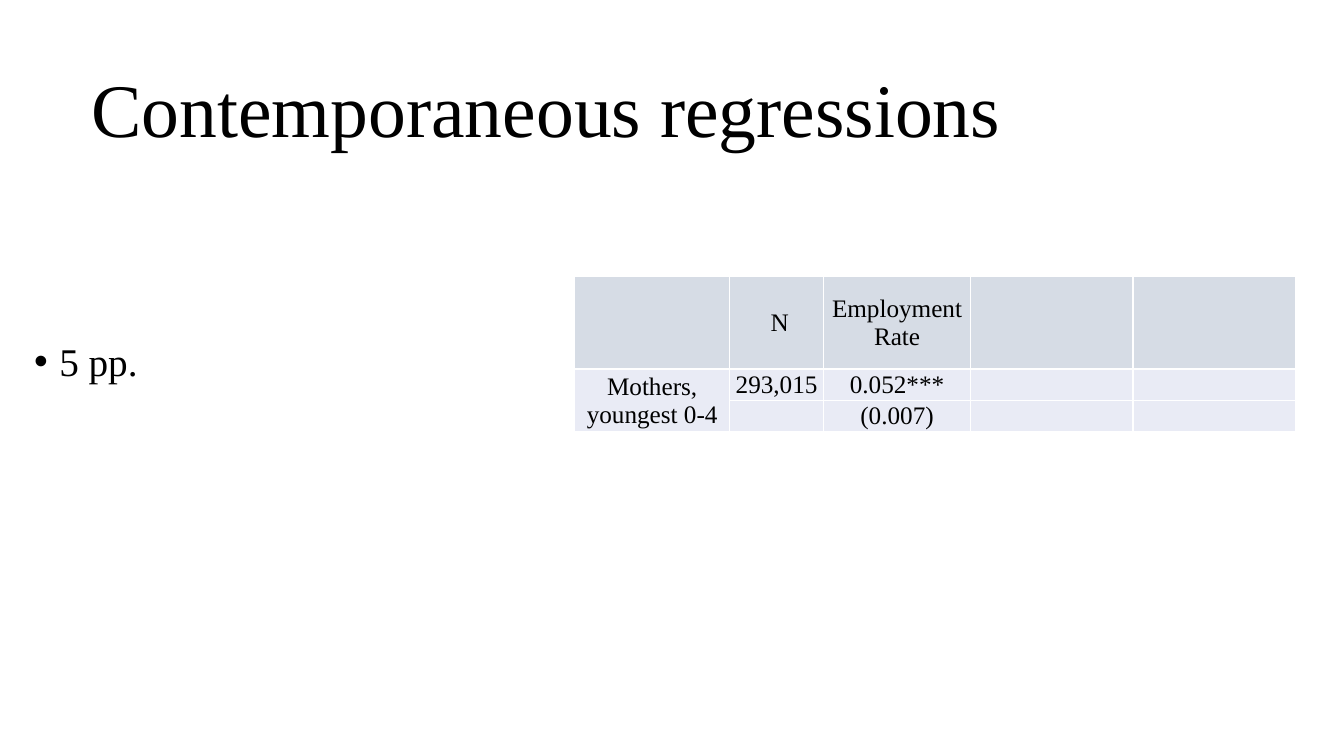
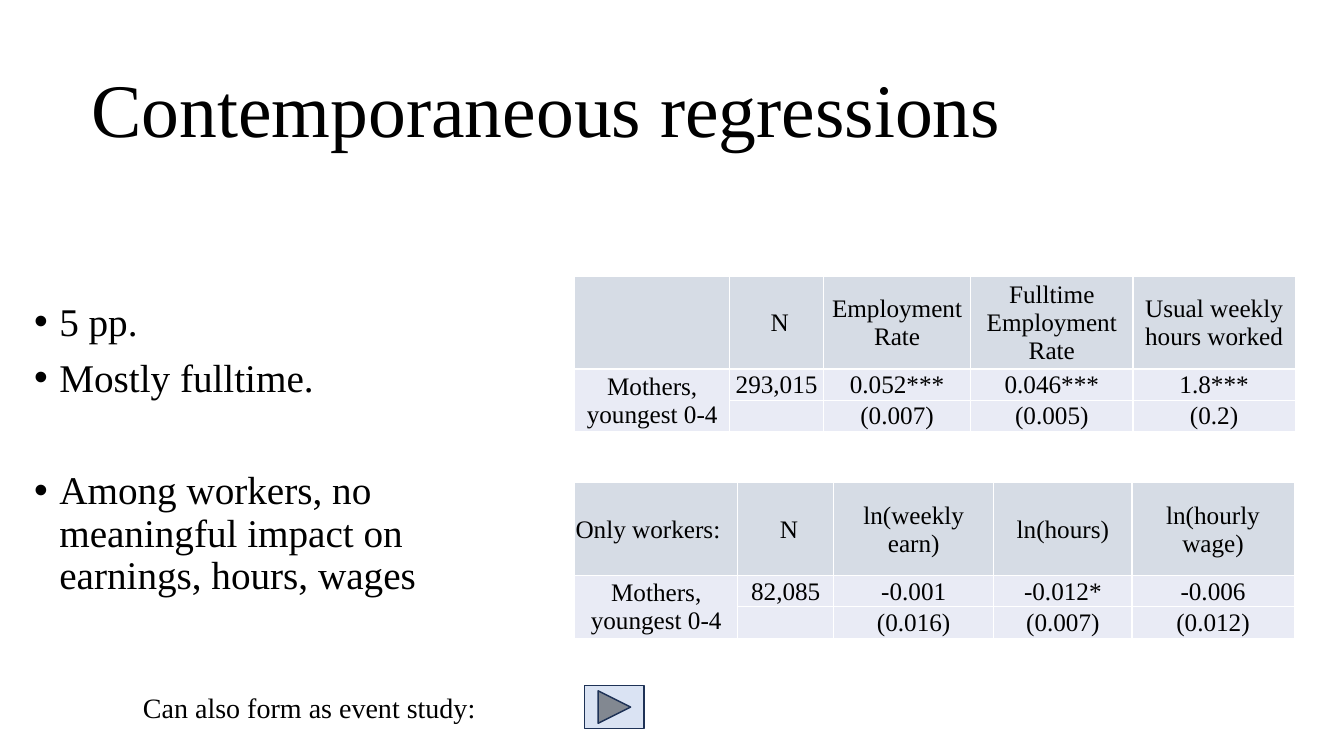
from dataclasses import dataclass

from lxml import etree
from pptx import Presentation
from pptx import util as u
from pptx.dml.color import RGBColor
from pptx.enum import shapes, text
from pptx.oxml import ns

COLORS = {
    "text": "000000",
    "header": "D6DCE5",
    "body": "E9EBF5",
    "border": "FFFFFF",
    "button": "DAE3F3",
    "button_line": "1E3256",
}
FONT = "Times New Roman"
GRID = u.Inches(0.1)  # side of one square grid cell
SLIDE_COLUMNS, SLIDE_ROWS = 133.33, 75
ROW_HEIGHTS = (9.2, 3.1, 3.1)
CELL_FORMAT = {
    "margin_left": u.Inches(0.01),
    "margin_right": u.Inches(0.01),
    "margin_top": u.Inches(0.01),
    "margin_bottom": 0,
    "vertical_anchor": text.MSO_ANCHOR.MIDDLE,
}
BULLET_FORMAT = {"marL": "228600", "indent": "-228600"}


@dataclass(frozen=True)
class Box:
    """An area in grid cells."""

    left: float
    top: float
    width: float
    height: float

    def emu(self) -> tuple[int, ...]:
        return tuple(grid(n) for n in (self.left, self.top, self.width, self.height))


@dataclass(frozen=True)
class Bullet:
    wording: str
    space_before: float = 10


@dataclass(frozen=True)
class Regression:
    """Estimates with their standard errors, one outcome a column."""

    top: float
    widths: tuple[float, ...]
    corner: str
    outcomes: tuple[str, ...]
    sample_size: str
    estimates: tuple[str, ...]
    errors: tuple[str, ...]

    def rows(self, shown: int) -> list[list[str]]:
        """Cell texts, with only the first outcomes filled in."""
        starts = ((self.corner, " N"), ("Mothers, youngest 0-4", self.sample_size), ("", ""))
        results = (self.outcomes, self.estimates, self.errors)
        return [
            [*start, *(word if i < shown else "" for i, word in enumerate(words))]
            for start, words in zip(starts, results)
        ]


ALL_MOTHERS = Regression(
    27.4,
    (15.4, 9.3, 14.6, 16.1, 16.1),
    "",
    ("Employment Rate", "Fulltime Employment Rate", "Usual weekly hours worked"),
    "293,015",
    ("0.052***", "0.046***", "1.8***"),
    ("(0.007)", "(0.005)", "(0.2)"),
)
ONLY_WORKERS = Regression(
    47.9,
    (16.2, 9.5, 15.9, 13.7, 16.1),
    "Only workers:",
    ("ln(weekly earn)", "ln(hours)", "ln(hourly wage)"),
    "82,085",
    ("-0.001", "-0.012*", "-0.006"),
    ("(0.016)", "(0.007)", "(0.012)"),
)


def grid(cells: float) -> int:
    return round(cells * GRID)


def rgb(name: str) -> RGBColor:
    return RGBColor.from_string(COLORS[name])


def write(paragraph, wording: str, size: float) -> None:
    run = paragraph.add_run()
    run.text = wording
    run.font.name = FONT
    run.font.size = u.Pt(size)
    run.font.color.rgb = rgb("text")


def add_frame(slide, box: Box):
    frame = slide.shapes.add_textbox(*box.emu()).text_frame
    frame.word_wrap = True
    return frame


def add_title(slide, wording: str) -> None:
    frame = add_frame(slide, Box(8.1, 4, 116.1, 14.5))
    frame.vertical_anchor = text.MSO_ANCHOR.MIDDLE
    frame.paragraphs[0].line_spacing = 0.9
    write(frame.paragraphs[0], wording, 54)


def add_bullets(slide, top: float, bullets: tuple[Bullet, ...]) -> None:
    frame = add_frame(slide, Box(2.4, top, 51.1, 40))
    for i, bullet in enumerate(bullets):
        paragraph = frame.add_paragraph() if i else frame.paragraphs[0]
        paragraph.line_spacing = 0.9
        paragraph.space_before = u.Pt(bullet.space_before)
        write(paragraph, bullet.wording, 28)
        properties = paragraph._p.get_or_add_pPr()
        for key, value in BULLET_FORMAT.items():
            properties.set(key, value)
        etree.SubElement(properties, ns.qn("a:buFont")).set("typeface", "Arial")
        etree.SubElement(properties, ns.qn("a:buChar")).set("char", "•")


def add_borders(cell) -> None:
    properties = cell._tc.get_or_add_tcPr()
    for i, side in enumerate(("a:lnL", "a:lnR", "a:lnT", "a:lnB")):
        line = etree.Element(ns.qn(side), w=str(u.Pt(1)))
        fill = etree.SubElement(line, ns.qn("a:solidFill"))
        etree.SubElement(fill, ns.qn("a:srgbClr")).set("val", COLORS["border"])
        properties.insert(i, line)


def add_regression(slide, regression: Regression, shown: int = 3) -> None:
    rows = regression.rows(shown)
    box = Box(57, regression.top, sum(regression.widths), sum(ROW_HEIGHTS))
    table = slide.shapes.add_table(len(rows), len(regression.widths), *box.emu()).table
    table.first_row = table.horz_banding = False
    for column, width in zip(table.columns, regression.widths):
        column.width = grid(width)
    for row, height in zip(table.rows, ROW_HEIGHTS):
        row.height = grid(height)
    for r, words in enumerate(rows):
        for c, wording in enumerate(words):
            cell = table.cell(r, c)
            for key, value in CELL_FORMAT.items():
                setattr(cell, key, value)
            cell.fill.solid()
            cell.fill.fore_color.rgb = rgb("body" if r else "header")
            add_borders(cell)
            if wording:
                paragraph = cell.text_frame.paragraphs[0]
                is_corner = r == c == 0
                paragraph.alignment = text.PP_ALIGN.LEFT if is_corner else text.PP_ALIGN.CENTER
                write(paragraph, wording, 18)
    table.cell(1, 0).merge(table.cell(2, 0))


def add_event_study(slide) -> None:
    kind = shapes.MSO_SHAPE.ACTION_BUTTON_FORWARD_OR_NEXT
    button = slide.shapes.add_shape(kind, *Box(58, 68, 5.9, 4.3).emu())
    button.shadow.inherit = False
    button.fill.solid()
    button.fill.fore_color.rgb = rgb("button")
    button.line.color.rgb = rgb("button_line")
    button.line.width = u.Pt(1)
    caption = add_frame(slide, Box(13.2, 68, 36.6, 4.4))
    write(caption.paragraphs[0], "Can also form as event study:", 20)


def main() -> None:
    deck = Presentation()
    deck.slide_width, deck.slide_height = grid(SLIDE_COLUMNS), grid(SLIDE_ROWS)
    employment, details = (deck.slides.add_slide(deck.slide_layouts[6]) for _ in range(2))
    for slide in (employment, details):
        add_title(slide, "Contemporaneous regressions")

    first_finding = Bullet("5 pp.", 0)
    add_bullets(employment, 33.5, (first_finding,))
    add_regression(employment, ALL_MOTHERS, shown=1)

    findings = (
        first_finding,
        Bullet("Mostly fulltime."),
        Bullet("Among workers, no meaningful impact on earnings, hours, wages", 50),
    )
    add_bullets(details, 29.5, findings)
    add_regression(details, ALL_MOTHERS)
    add_regression(details, ONLY_WORKERS)
    add_event_study(details)
    deck.save("out.pptx")


if __name__ == "__main__":
    main()
